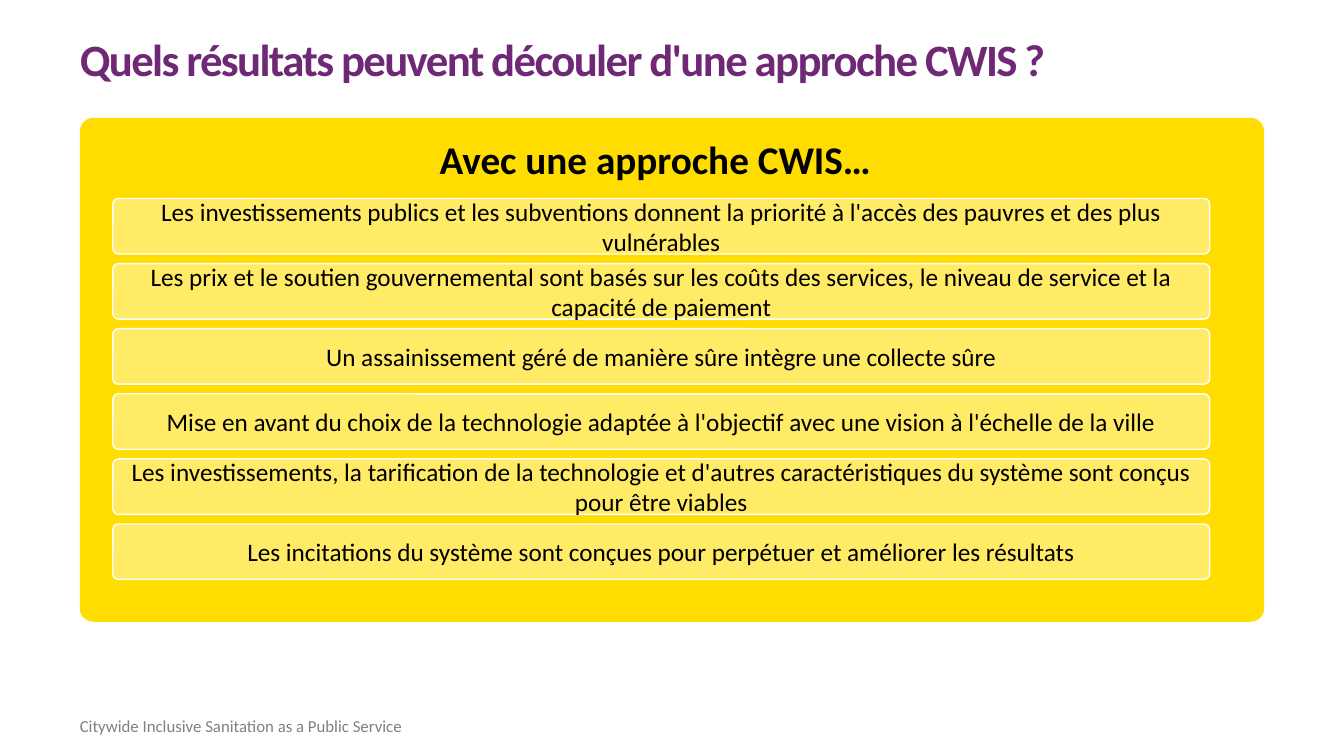
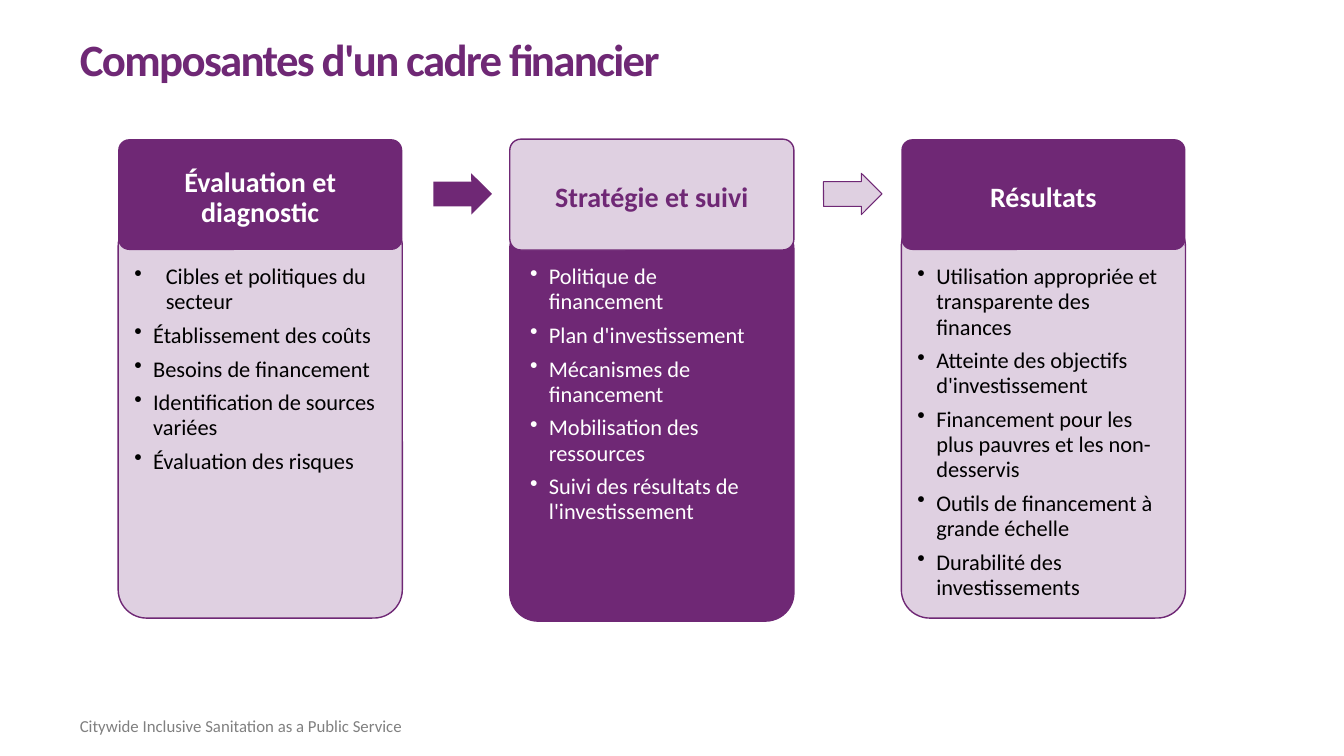
from dataclasses import dataclass

from lxml.etree import SubElement
from pptx import Presentation
from pptx.dml.color import RGBColor
from pptx.enum.shapes import MSO_SHAPE as Preset
from pptx.enum.text import MSO_ANCHOR as Anchor, PP_ALIGN as Align
from pptx.oxml.ns import qn
from pptx.shapes.autoshape import Shape
from pptx.slide import Slide
from pptx.text.text import TextFrame, _Paragraph as Paragraph
from pptx.util import Pt

COLORS = {
    "purple": "6F2875",
    "lilac": "DFD0E1",
    "yellow": "FFDD00",
    "pale_yellow": "FFEB66",
    "white": "FFFFFF",
    "black": "000000",
    "gray": "808080",
}
FONT = "Calibri"
FOOTER = "Citywide Inclusive Sanitation as a Public Service"
MARGIN_LEFT = 57
BULLET_INDENT = 13.5


@dataclass(frozen=True)
class Box:
    left: float
    top: float
    width: float
    height: float


@dataclass(frozen=True)
class Stage:
    heading: str
    items: tuple[str, ...]
    heading_fill: str
    heading_color: str
    body_fill: str
    body_color: str
    body_top: float = 155.5
    items_inset: float = 11.5
    first_indent: float = BULLET_INDENT


@dataclass(frozen=True)
class Arrow:
    left: float
    fill: str
    line: str | None = None


OUTCOMES = (
    "Les investissements publics et les subventions donnent la priorité à l'accès "
    "des pauvres et des plus vulnérables",
    "Les prix et le soutien gouvernemental sont basés sur les coûts des services, "
    "le niveau de service et la capacité de paiement",
    "Un assainissement géré de manière sûre intègre une collecte sûre",
    "Mise en avant du choix de la technologie adaptée à l'objectif avec une vision "
    "à l'échelle de la ville",
    "Les investissements, la tarification de la technologie et d'autres "
    "caractéristiques du système sont conçus pour être viables",
    "Les incitations du système sont conçues pour perpétuer et améliorer les résultats",
)

STAGES = (
    Stage(
        "Évaluation et diagnostic",
        (
            "Cibles et politiques du secteur",
            "Établissement des coûts",
            "Besoins de financement",
            "Identification de sources variées",
            "Évaluation des risques",
        ),
        "purple", "white", "lilac", "black", first_indent=22.5,
    ),
    Stage(
        "Stratégie et suivi",
        (
            "Politique de financement",
            "Plan d'investissement",
            "Mécanismes de financement",
            "Mobilisation des ressources",
            "Suivi des résultats de l'investissement",
        ),
        "lilac", "purple", "purple", "white", body_top=157.7, items_inset=14.5,
    ),
    Stage(
        "Résultats",
        (
            "Utilisation appropriée et transparente des finances",
            "Atteinte des objectifs d'investissement",
            "Financement pour les plus pauvres et les non-desservis",
            "Outils de financement à grande échelle",
            "Durabilité des investissements",
        ),
        "purple", "white", "lilac", "black",
    ),
)

ARROWS = (Arrow(309.6, "purple"), Arrow(588.2, "lilac", "purple"))


def rgb(name: str) -> RGBColor:
    return RGBColor.from_string(COLORS[name])


def style_paragraph(paragraph: Paragraph, size: float, color: str, bold: bool = False,
                    align: Align = Align.LEFT, spacing: float | Pt = 1.0) -> None:
    paragraph.alignment = align
    paragraph.line_spacing = spacing
    font = paragraph.font
    font.name, font.size, font.bold = FONT, Pt(size), bold
    font.color.rgb = rgb(color)


def set_frame(frame: TextFrame, anchor: Anchor = Anchor.TOP,
              insets: tuple[float, float, float, float] = (0, 0, 0, 0)) -> None:
    """Wrap the text and set the left, top, right and bottom insets."""
    frame.word_wrap = True
    frame.vertical_anchor = anchor
    (frame.margin_left, frame.margin_top,
     frame.margin_right, frame.margin_bottom) = map(Pt, insets)


def add_text_frame(slide: Slide, box: Box) -> TextFrame:
    frame = slide.shapes.add_textbox(
        Pt(box.left), Pt(box.top), Pt(box.width), Pt(box.height)).text_frame
    set_frame(frame)
    return frame


def add_preset(slide: Slide, preset: Preset, box: Box, adjustments: tuple[float, ...],
               fill: str, line: str | None = None, line_width: float = 1) -> Shape:
    shape = slide.shapes.add_shape(
        preset, Pt(box.left), Pt(box.top), Pt(box.width), Pt(box.height))
    shape.shadow.inherit = False
    for index, value in enumerate(adjustments):
        shape.adjustments[index] = value
    shape.fill.solid()
    shape.fill.fore_color.rgb = rgb(fill)
    if line:
        shape.line.color.rgb = rgb(line)
        shape.line.width = Pt(line_width)
    else:
        shape.line.fill.background()
    return shape


def add_bullet(paragraph: Paragraph, color: str, indent: float) -> None:
    properties = paragraph._p.get_or_add_pPr()
    properties.set("marL", str(Pt(indent)))
    properties.set("indent", str(-Pt(indent)))
    bullet_color = SubElement(properties, qn("a:buClr"))
    SubElement(bullet_color, qn("a:srgbClr"), val=COLORS[color])
    SubElement(properties, qn("a:buChar"), char="•")


def add_titled_slide(deck: Presentation, title: str) -> Slide:
    """Add a blank slide with the shared title and footer."""
    slide = deck.slides.add_slide(deck.slide_layouts[6])
    footer = add_text_frame(slide, Box(MARGIN_LEFT, 511, 534, 27)).paragraphs[0]
    footer.text = FOOTER
    style_paragraph(footer, 12, "gray")

    heading = add_text_frame(slide, Box(MARGIN_LEFT, 28.8, 746, 41)).paragraphs[0]
    heading.text = title
    style_paragraph(heading, 32, "purple", bold=True, spacing=0.85)
    heading.runs[0]._r.get_or_add_rPr().set("spc", "-120")
    return slide


def build_outcomes(deck: Presentation) -> None:
    slide = add_titled_slide(deck, "Quels résultats peuvent découler d'une approche CWIS ?")
    add_preset(slide, Preset.ROUNDED_RECTANGLE, Box(MARGIN_LEFT, 84.2, 846, 360),
               (0.027,), "yellow")

    lead_frame = add_text_frame(slide, Box(MARGIN_LEFT, 95.8, 822, 39.6))
    set_frame(lead_frame, Anchor.MIDDLE, (9.4,) * 4)
    lead = lead_frame.paragraphs[0]
    lead.text = "Avec une approche CWIS…"
    style_paragraph(lead, 28, "black", bold=True, align=Align.CENTER, spacing=0.9)

    first_top, pitch = 141.8, 46.5
    for row, outcome in enumerate(OUTCOMES):
        bar = add_preset(slide, Preset.ROUNDED_RECTANGLE,
                         Box(80.6, first_top + row * pitch, 783.4, 39.6),
                         (0.1,), "pale_yellow", "white")
        set_frame(bar.text_frame, Anchor.MIDDLE, (7.2,) * 4)
        statement = bar.text_frame.paragraphs[0]
        statement.text = outcome
        style_paragraph(statement, 18, "black", align=Align.CENTER)


def add_stage(slide: Slide, stage: Stage, left: float) -> None:
    width = 203
    add_preset(slide, Preset.ROUNDED_RECTANGLE, Box(left, stage.body_top, width, 286),
               (0.1,), stage.body_fill, "purple")
    header = add_preset(slide, Preset.ROUNDED_RECTANGLE, Box(left, 99.4, width, 79.2),
                        (0.1,), stage.heading_fill,
                        "purple" if stage.heading_fill == "lilac" else None)
    set_frame(header.text_frame, Anchor.MIDDLE, (11.5, 11.5, 11.5, 5.8))
    heading = header.text_frame.paragraphs[0]
    heading.text = stage.heading
    style_paragraph(heading, 20, stage.heading_color, bold=True,
                    align=Align.CENTER, spacing=0.9)

    items_frame = add_text_frame(slide, Box(left + stage.items_inset, 188.6, 173.5, 205))
    for index, item in enumerate(stage.items):
        entry = items_frame.add_paragraph() if index else items_frame.paragraphs[0]
        entry.text = item
        add_bullet(entry, stage.body_color, BULLET_INDENT if index else stage.first_indent)
        style_paragraph(entry, 16, stage.body_color, spacing=Pt(18))
        entry.space_after = Pt(6)


def build_framework(deck: Presentation) -> None:
    slide = add_titled_slide(deck, "Composantes d'un cadre financier")
    first_left, pitch = 84.4, 279.7
    for column, stage in enumerate(STAGES):
        add_stage(slide, stage, first_left + column * pitch)
    for arrow in ARROWS:
        pointer = add_preset(slide, Preset.RIGHT_ARROW, Box(arrow.left, 123.8, 41.8, 29.5),
                             (0.6, 0.5), arrow.fill, arrow.line, 0.75)
        pointer.rotation = 359.8


def main() -> None:
    deck = Presentation()
    deck.slide_width, deck.slide_height = Pt(960), Pt(540)
    build_outcomes(deck)
    build_framework(deck)
    deck.save("out.pptx")


if __name__ == "__main__":
    main()
